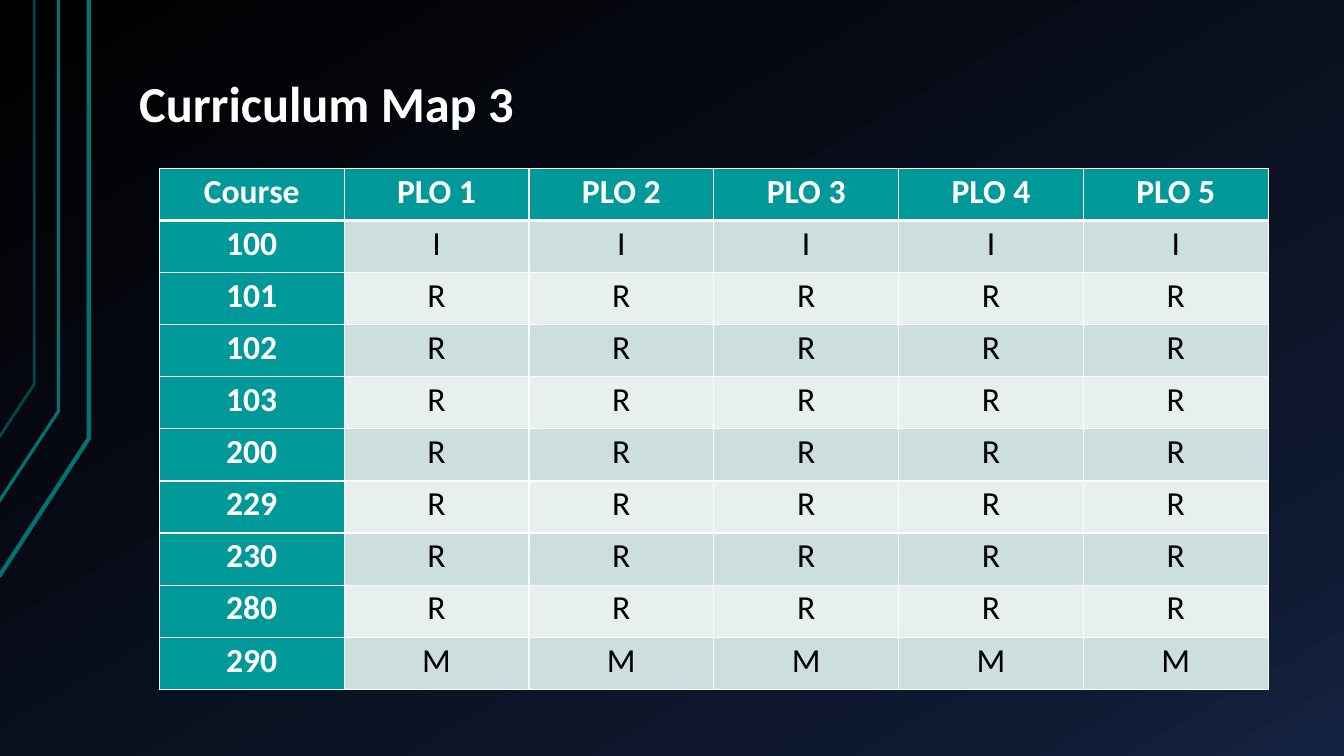
"""Build the Curriculum Map 3 slide: a course by outcome table on a dark gradient."""
from copy import deepcopy

from lxml import etree
from pptx import Presentation
from pptx.dml.color import RGBColor
from pptx.enum.text import MSO_ANCHOR, PP_ALIGN
from pptx.oxml.ns import qn
from pptx.util import Inches, Pt

CENTER, LEFT = PP_ALIGN.CENTER, PP_ALIGN.LEFT
TOP, BOTTOM = MSO_ANCHOR.TOP, MSO_ANCHOR.BOTTOM

TITLE = "Curriculum Map 3"
OUTCOMES = [f"PLO {number}" for number in range(1, 6)]
COURSE_LEVELS = {
    "100": "I", "101": "R", "102": "R", "103": "R", "200": "R",
    "229": "R", "230": "R", "280": "R", "290": "M",
}
FONT = "Calibri"
WHITE, BLACK, TEAL, DARK_TEAL = "FFFFFF", "000000", "009999", "007373"
BAND_FILLS = ["E7EFEF", "CCDEDE"]
BACKGROUND_STOPS = [(0, "000000"), (0.85, "0F1931"), (1, "142242")]
RAILS = [
    ([(-0.01, 5.72), (0.88, 4.35), (0.88, 0)], 3, 100),
    ([(-0.02, 4.99), (0.58, 4.08), (0.58, 0)], 2.25, 100),
    ([(-0.01, 4.34), (0.34, 3.81), (0.34, 0)], 2, 60),
]
TABLE_LEFT, TABLE_TOP, TABLE_WIDTH, TABLE_HEIGHT = 1.58, 1.67, 11, 5.17


def color(hex_string):
    return RGBColor.from_string(hex_string)


def write(frame, text, size=24, ink=WHITE, bold=True, align=CENTER, spacing=1.07):
    paragraph = frame.paragraphs[0]
    paragraph.alignment = align
    paragraph.line_spacing = spacing
    run = paragraph.add_run()
    run.text = text
    font = run.font
    font.name, font.size, font.bold = FONT, Pt(size), bold
    font.color.rgb = color(ink)


def paint_background(slide):
    fill = slide.background.fill
    fill.gradient()
    fill.gradient_angle = 300
    stop_list = slide.element.find(".//" + qn("a:gsLst"))
    stop_list.append(deepcopy(stop_list[-1]))
    for stop, (position, hex_string) in zip(fill.gradient_stops, BACKGROUND_STOPS):
        stop.position = position
        stop.color.rgb = color(hex_string)


def add_rail(slide, points, width, opacity):
    corners = [(Inches(x), Inches(y)) for x, y in points]
    builder = slide.shapes.build_freeform(*corners[0])
    builder.add_line_segments(corners[1:], close=False)
    shape = builder.convert_to_shape()
    shape.shadow.inherit = False
    shape.fill.background()
    shape.line.color.rgb = color(DARK_TEAL)
    shape.line.width = Pt(width)
    if opacity < 100:
        ink = shape.element.find(".//" + qn("a:ln")).find(".//" + qn("a:srgbClr"))
        etree.SubElement(ink, qn("a:alpha"), val=str(opacity * 1000))


def add_borders(cell, **widths):
    properties = cell._tc.get_or_add_tcPr()
    for index, side in enumerate("LRTB"):
        width = str(Pt(widths.get(side, 1)))
        line = etree.Element(qn("a:ln" + side), w=width)
        solid = etree.SubElement(line, qn("a:solidFill"))
        etree.SubElement(solid, qn("a:srgbClr"), val=WHITE)
        properties.insert(index, line)


def add_map(slide):
    rows = [["Course", *OUTCOMES]]
    rows += [[course] + [level] * len(OUTCOMES) for course, level in COURSE_LEVELS.items()]
    table = slide.shapes.add_table(
        len(rows), len(rows[0]), Inches(TABLE_LEFT), Inches(TABLE_TOP),
        Inches(TABLE_WIDTH), Inches(TABLE_HEIGHT)).table
    table.first_col = True
    for row_index, row in enumerate(rows):
        for column_index, text in enumerate(row):
            cell = table.cell(row_index, column_index)
            heading = row_index == 0 or column_index == 0
            cell.margin_left = cell.margin_right = Inches(0.07)
            cell.margin_top = cell.margin_bottom = 0
            cell.vertical_anchor = TOP
            cell.fill.solid()
            cell.fill.fore_color.rgb = color(TEAL if heading else BAND_FILLS[row_index % 2])
            add_borders(cell, T=3 if row_index == 1 else 1, B=3 if row_index == 0 else 1)
            write(cell.text_frame, text, ink=WHITE if heading else BLACK, bold=heading)


def add_title(slide):
    title = slide.shapes.title
    title.left, title.top = Inches(1.25), Inches(0.58)
    title.width, title.height = Inches(11.33), Inches(0.81)
    frame = title.text_frame
    frame.word_wrap = True
    frame.vertical_anchor = BOTTOM
    frame.margin_left = frame.margin_right = Inches(0.13)
    frame.margin_top = frame.margin_bottom = Inches(0.07)
    write(frame, TITLE, size=36, align=LEFT, spacing=0.9)


def main():
    presentation = Presentation()
    presentation.slide_width, presentation.slide_height = Inches(13.33), Inches(7.5)
    slide = presentation.slides.add_slide(presentation.slide_layouts.get_by_name("Title Only"))
    paint_background(slide)
    for points, width, opacity in RAILS:
        add_rail(slide, points, width, opacity)
    add_map(slide)
    add_title(slide)
    presentation.save("out.pptx")


if __name__ == "__main__":
    main()
